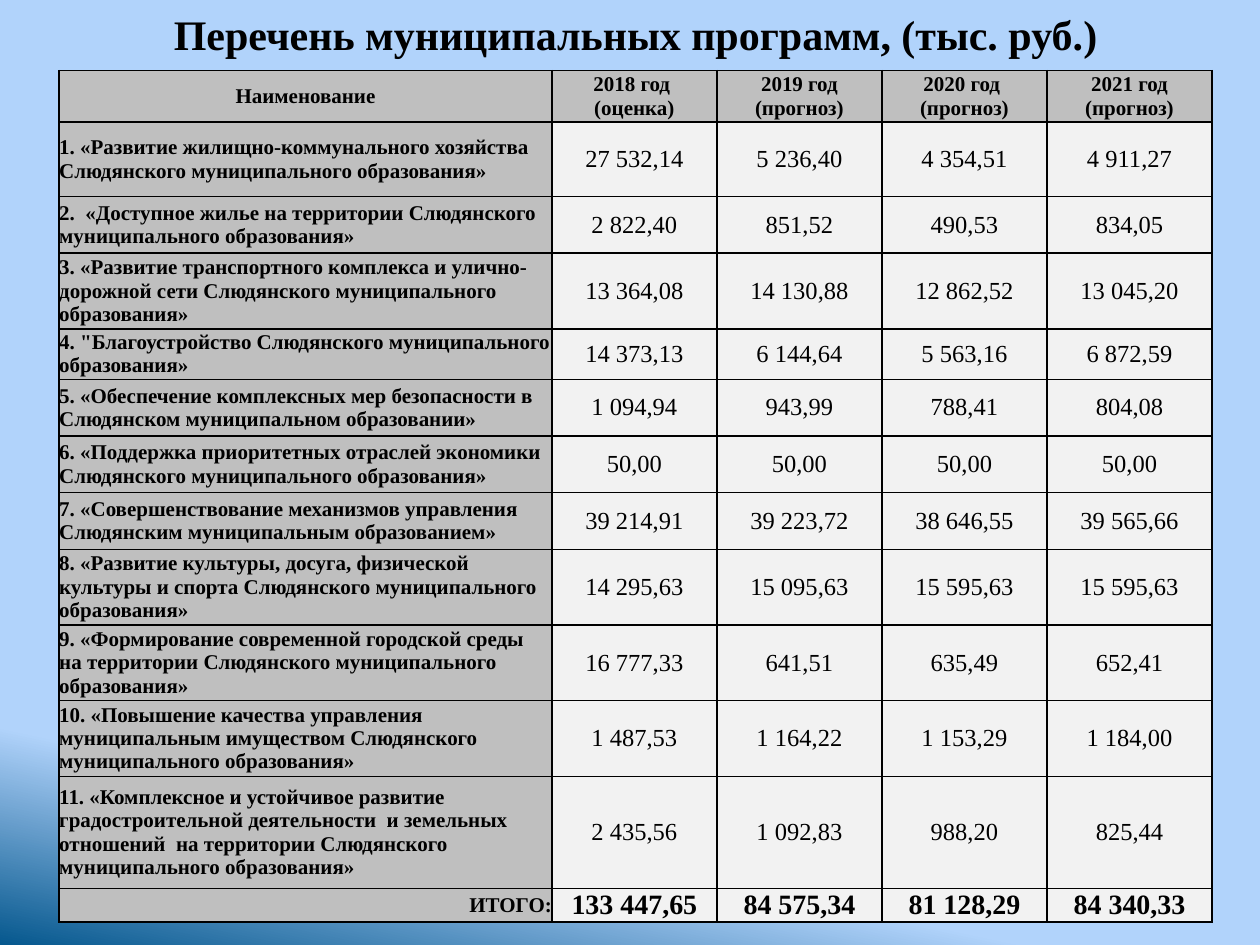
from typing import NamedTuple

from lxml.etree import SubElement
from pptx import Presentation
from pptx.dml.color import RGBColor
from pptx.enum.text import MSO_ANCHOR as Anchor, PP_ALIGN as Align
from pptx.oxml.ns import qn
from pptx.util import Inches, Pt

FONT = "Times New Roman"
COLORS = {"text": "000000", "label": "BFBFBF", "value": "F2F2F2",
          "sky": "B1D3FB", "deep": "06588E"}
COLUMN_WIDTHS = [3.91] + [1.31] * 4


class Style(NamedTuple):
    size: int
    bold: bool
    align: Align
    fill: str = ""


class Row(NamedTuple):
    height: float
    label: str
    values: tuple[str, ...]


HEADING = Style(24, True, Align.CENTER)
HEADER = Style(12, True, Align.CENTER, "label")
LABEL = Style(12, True, Align.LEFT, "label")
VALUE = Style(14, False, Align.CENTER, "value")
TOTAL_LABEL = Style(12, True, Align.RIGHT, "label")
TOTAL = Style(16, True, Align.CENTER, "value")

HEADER_ROW = Row(0.41, "Наименование", (
    "2018 год \n(оценка)", "2019 год (прогноз)", "2020 год  (прогноз)", "2021 год (прогноз)"))
PROGRAMS = [
    Row(0.59, "1. «Развитие жилищно-коммунального хозяйства  Слюдянского муниципального образования»",
        ("27 532,14", "5 236,40", "4 354,51", "4 911,27")),
    Row(0.45, "2.  «Доступное жилье на территории Слюдянского муниципального образования»",
        ("2 822,40", "851,52", "490,53", "834,05")),
    Row(0.59, "3. «Развитие транспортного комплекса и улично- дорожной сети Слюдянского "
        "муниципального образования»",
        ("13 364,08", "14 130,88", "12 862,52", "13 045,20")),
    Row(0.37, "4. \"Благоустройство Слюдянского муниципального образования»",
        ("14 373,13", "6 144,64", "5 563,16", "6 872,59")),
    Row(0.45, "5. «Обеспечение комплексных мер безопасности в Слюдянском муниципальном образовании»",
        ("1 094,94", "943,99", "788,41", "804,08")),
    Row(0.45, "6. «Поддержка приоритетных отраслей экономики Слюдянского муниципального образования»",
        ("50,00",) * 4),
    Row(0.45, "7. «Совершенствование механизмов управления Слюдянским муниципальным образованием»",
        ("39 214,91", "39 223,72", "38 646,55", "39 565,66")),
    Row(0.59, "8. «Развитие культуры, досуга, физической культуры и спорта Слюдянского "
        "муниципального образования»",
        ("14 295,63", "15 095,63", "15 595,63", "15 595,63")),
    Row(0.59, "9. «Формирование современной городской среды на территории Слюдянского "
        "муниципального образования»",
        ("16 777,33", "641,51", "635,49", "652,41")),
    Row(0.59, "10. «Повышение качества управления муниципальным имуществом Слюдянского "
        "муниципального образования»",
        ("1 487,53", "1 164,22", "1 153,29", "1 184,00")),
    Row(0.89, "11. «Комплексное и устойчивое развитие градостроительной деятельности  и земельных "
        "отношений  на территории Слюдянского муниципального образования»",
        ("2 435,56", "1 092,83", "988,20", "825,44")),
]
TOTAL_ROW = Row(0.25, "ИТОГО:", ("133 447,65", "84 575,34", "81 128,29", "84 340,33"))


def color(name: str) -> RGBColor:
    """Return the named colour."""
    return RGBColor.from_string(COLORS[name])


def write_text(frame, text: str, style: Style) -> None:
    """Fill a text frame and format its runs."""
    frame.text = text
    frame.word_wrap = True
    for para in frame.paragraphs:
        para.alignment = style.align
        for span in para.runs:
            span.font.name = FONT
            span.font.size = Pt(style.size)
            span.font.bold = style.bold
            span.font.color.rgb = color("text")


def add_borders(cell) -> None:
    """Rule all four sides of a cell."""
    properties = cell._tc.get_or_add_tcPr()
    for side in ("a:lnL", "a:lnR", "a:lnT", "a:lnB"):
        line = SubElement(properties, qn(side), w=str(Pt(1)))
        solid = SubElement(line, qn("a:solidFill"))
        SubElement(solid, qn("a:srgbClr"), val=COLORS["text"])


def fill_cell(cell, text: str, style: Style) -> None:
    """Write and style one table cell."""
    write_text(cell.text_frame, text, style)
    cell.vertical_anchor = Anchor.MIDDLE
    cell.margin_left = cell.margin_right = cell.margin_top = cell.margin_bottom = 0
    add_borders(cell)
    cell.fill.solid()
    cell.fill.fore_color.rgb = color(style.fill)


def paint_background(page) -> None:
    """Apply the sloping gradient to the page."""
    fill = page.background.fill
    fill.gradient()
    fill.gradient_angle = 258
    for stop, (position, name) in zip(fill.gradient_stops, ((0.82, "sky"), (1, "deep"))):
        stop.position = position
        stop.color.rgb = color(name)


def add_title(page, text: str) -> None:
    """Place the page title."""
    box = page.shapes.add_textbox(Inches(0.2), Inches(-0.09), Inches(9.69), Inches(0.71))
    write_text(box.text_frame, text, HEADING)
    box.text_frame.vertical_anchor = Anchor.MIDDLE


def add_budget_table(page) -> None:
    """Build the table of programmes with header and total."""
    rows = [(HEADER_ROW, HEADER, HEADER),
            *((program, LABEL, VALUE) for program in PROGRAMS),
            (TOTAL_ROW, TOTAL_LABEL, TOTAL)]
    height = sum(row.height for row, _, _ in rows)
    table = page.shapes.add_table(len(rows), len(COLUMN_WIDTHS), Inches(0.47), Inches(0.56),
                                  Inches(sum(COLUMN_WIDTHS)), Inches(height)).table
    for column, width in zip(table.columns, COLUMN_WIDTHS):
        column.width = Inches(width)
    for line, (row, label_style, value_style) in zip(table.rows, rows):
        line.height = Inches(row.height)
        label_cell, *value_cells = line.cells
        fill_cell(label_cell, row.label, label_style)
        for cell, value in zip(value_cells, row.values):
            fill_cell(cell, value, value_style)


def main() -> None:
    """Create the deck and save it."""
    deck = Presentation()
    deck.slide_width, deck.slide_height = Inches(10), Inches(7.5)
    page = deck.slides.add_slide(deck.slide_layouts[6])
    paint_background(page)
    add_title(page, "Перечень муниципальных программ, (тыс. руб.)")
    add_budget_table(page)
    deck.save("out.pptx")


if __name__ == "__main__":
    main()
